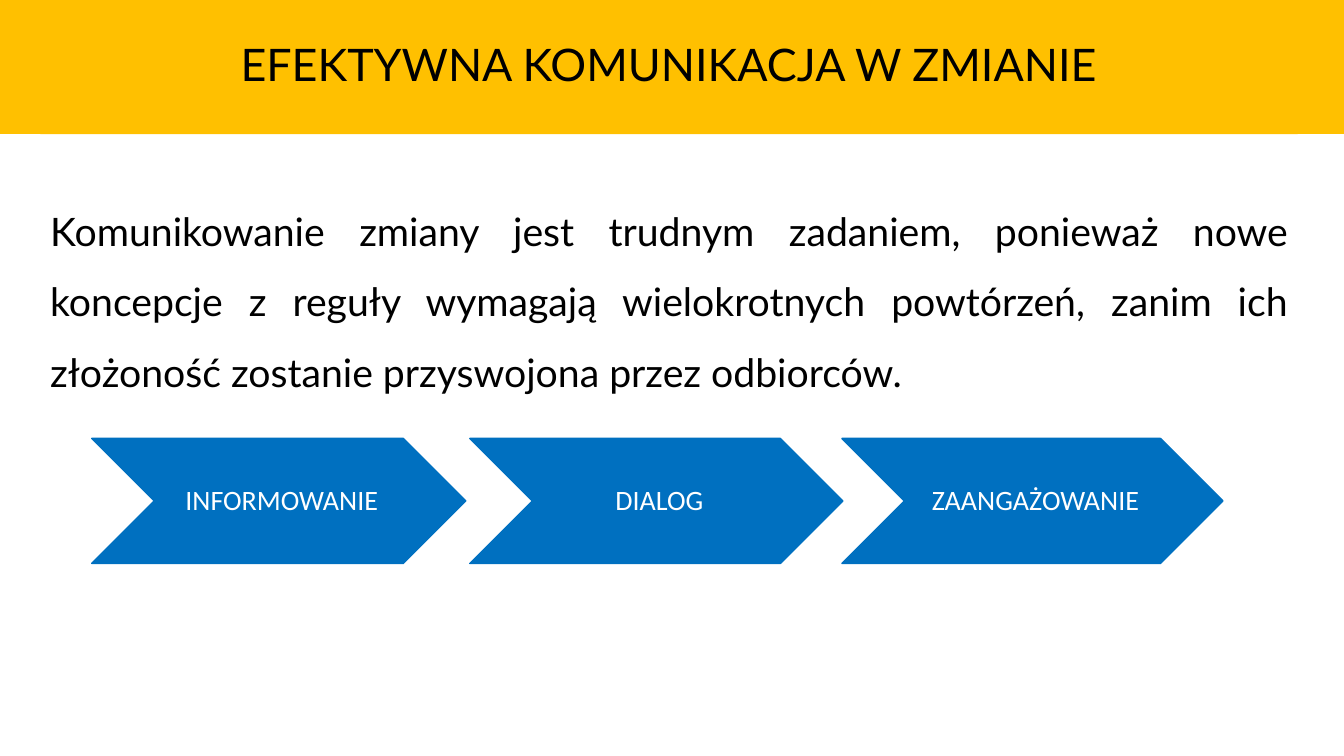
"""Build the slide on effective communication during change."""
from dataclasses import dataclass

from pptx import Presentation
from pptx.dml.color import RGBColor
from pptx.enum.shapes import MSO_SHAPE
from pptx.enum.text import MSO_ANCHOR, PP_ALIGN
from pptx.util import Inches, Pt


@dataclass(frozen=True)
class Theme:
    band: RGBColor = RGBColor.from_string("FFC000")
    step: RGBColor = RGBColor.from_string("0070C0")
    dark: RGBColor = RGBColor.from_string("000000")
    light: RGBColor = RGBColor.from_string("FFFFFF")
    heading_font: str = "Lato"
    step_font: str = "Calibri"
    title_size: int = 32
    body_size: int = 28
    step_size: int = 20


def write(shape, text, font, size, color, align, spacing):
    frame = shape.text_frame
    frame.text = text
    frame.word_wrap = True
    para = frame.paragraphs[0]
    para.alignment = align
    para.line_spacing = spacing
    span = para.runs[0]
    span.font.name = font
    span.font.size = Pt(size)
    span.font.color.rgb = color
    return frame


def add_solid(kind, left, top, width, height, color):
    shape = page.shapes.add_shape(
        kind, Inches(left), Inches(top), Inches(width), Inches(height))
    shape.shadow.inherit = False
    shape.fill.solid()
    shape.fill.fore_color.rgb = color
    return shape


theme = Theme()
deck = Presentation()
deck.slide_width, deck.slide_height = Inches(13.33), Inches(7.5)
page = deck.slides.add_slide(deck.slide_layouts[5])

title = page.shapes.title
title.left, title.top = Inches(0.4), Inches(0)
title.width, title.height = Inches(12.47), Inches(1.33)
title.fill.solid()
title.fill.fore_color.rgb = theme.band
frame = write(title, "EFEKTYWNA KOMUNIKACJA W ZMIANIE", theme.heading_font,
              theme.title_size, theme.dark, PP_ALIGN.CENTER, 0.9)
frame.vertical_anchor = MSO_ANCHOR.MIDDLE

band = add_solid(MSO_SHAPE.RECTANGLE, 0, 0, 13.33, 1.33, theme.band)
band.line.fill.background()
title.element.addprevious(band.element)

body = page.shapes.add_textbox(
    Inches(0.4), Inches(1.77), Inches(12.47), Inches(4.99))
write(body,
      "Komunikowanie zmiany jest trudnym zadaniem, ponieważ nowe koncepcje "
      "z reguły wymagają wielokrotnych powtórzeń, zanim ich złożoność "
      "zostanie przyswojona przez odbiorców.",
      theme.heading_font, theme.body_size, theme.dark, PP_ALIGN.JUSTIFY, 1.5)

steps = [
    ("INFORMOWANIE", 0.91, 3.71),
    ("DIALOG", 4.66, 3.7),
    ("ZAANGAŻOWANIE", 8.35, 3.78),
]
for label, left, width in steps:
    chevron = add_solid(MSO_SHAPE.CHEVRON, left, 4.35, width, 1.24, theme.step)
    chevron.line.color.rgb = theme.step
    chevron.line.width = Pt(1)
    frame = write(chevron, label, theme.step_font, theme.step_size,
                  theme.light, PP_ALIGN.CENTER, 0.9)
    frame.vertical_anchor = MSO_ANCHOR.MIDDLE
    frame.margin_left = Inches(0.09)
    frame.margin_right = frame.margin_top = frame.margin_bottom = Inches(0.03)

deck.save("out.pptx")
